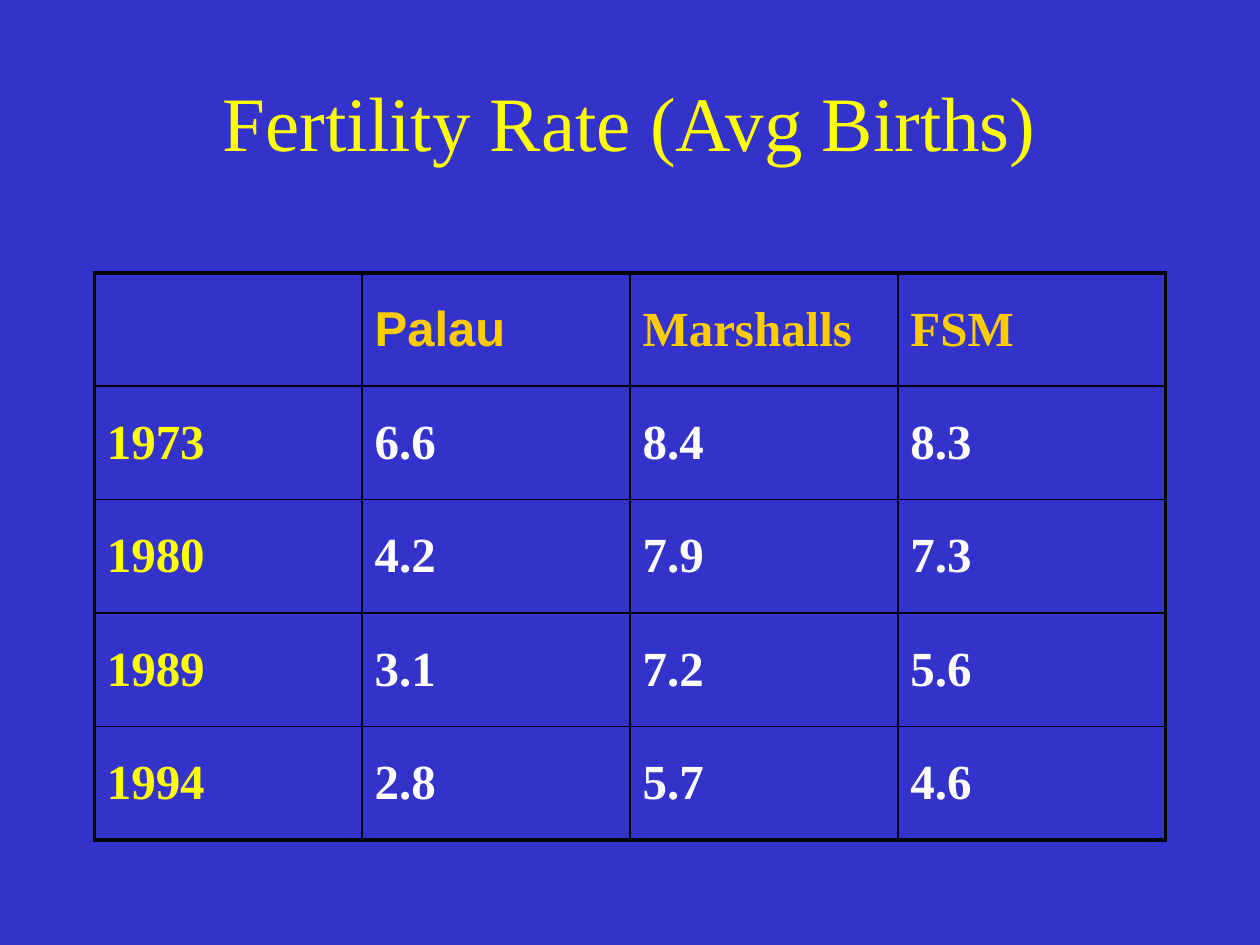
from lxml.etree import SubElement
from pptx import Presentation
from pptx.dml.color import RGBColor
from pptx.enum.text import MSO_ANCHOR, PP_ALIGN
from pptx.oxml.ns import qn
from pptx.util import Cm, Pt

BLUE, YELLOW, GOLD, WHITE, BLACK = "3333CC", "FFFF00", "FFCC00", "FFFFFF", "000000"
SERIF, SANS = "Times New Roman", "Arial"
INNER, OUTER = Pt(1), Pt(2.25)
BIRTHS = [
    ["", "Palau", "Marshalls", "FSM"],
    ["1973", "6.6", "8.4", "8.3"],
    ["1980", "4.2", "7.9", "7.3"],
    ["1989", "3.1", "7.2", "5.6"],
    ["1994", "2.8", "5.7", "4.6"],
]


def color(value):
    """Turn a hex string into a colour."""
    return RGBColor.from_string(value)


class Deck:
    """Hold the style and the current slide."""

    def __init__(self):
        """Start a 4:3 presentation with one title-only slide."""
        self.presentation = Presentation()
        self.presentation.slide_width = Cm(25.4)
        self.presentation.slide_height = Cm(19.05)
        self.slide = self.presentation.slides.add_slide(self.presentation.slide_layouts[5])
        background = self.slide.background.fill
        background.solid()
        background.fore_color.rgb = color(BLUE)

    def style(self, paragraph, size, tint, face=SERIF, bold=False):
        """Set the font of a paragraph."""
        font = paragraph.font
        font.size, font.name, font.bold = Pt(size), face, bold
        font.color.rgb = color(tint)

    def title(self, text, left, top, width, height):
        """Place and format the slide title."""
        heading = self.slide.shapes.title
        heading.left, heading.top = Cm(left), Cm(top)
        heading.width, heading.height = Cm(width), Cm(height)
        frame = heading.text_frame
        frame.text = text
        frame.vertical_anchor = MSO_ANCHOR.MIDDLE
        frame.paragraphs[0].alignment = PP_ALIGN.CENTER
        self.style(frame.paragraphs[0], 44, YELLOW)

    def borders(self, cell, widths):
        """Draw the left, right, top and bottom lines of a cell."""
        properties = cell._tc.get_or_add_tcPr()
        for side, width in zip("LRTB", widths):
            line = SubElement(properties, qn(f"a:ln{side}"), w=str(width))
            SubElement(SubElement(line, qn("a:solidFill")), qn("a:srgbClr"), val=BLACK)

    def table(self, rows, left, top, width, height):
        """Add an unfilled table with a heavy outer frame."""
        last_row, last_column = len(rows) - 1, len(rows[0]) - 1
        grid = self.slide.shapes.add_table(
            len(rows), len(rows[0]), Cm(left), Cm(top), Cm(width), Cm(height)
        ).table
        grid.first_row = grid.horz_banding = False
        for r, row in enumerate(rows):
            for c, text in enumerate(row):
                cell = grid.cell(r, c)
                cell.text = text
                cell.vertical_anchor = MSO_ANCHOR.MIDDLE
                tint = GOLD if r == 0 else YELLOW if c == 0 else WHITE
                face = SANS if text == "Palau" else SERIF
                self.style(cell.text_frame.paragraphs[0], 28, tint, face, bold=True)
                edges = (c == 0, c == last_column, r == 0, r == last_row)
                self.borders(cell, [OUTER if edge else INNER for edge in edges])
                cell.fill.background()


def main():
    """Build and save the fertility slide."""
    deck = Deck()
    deck.title("Fertility Rate (Avg Births)", 1.9, 0.85, 21.6, 3.18)
    deck.table(BIRTHS, 1.9, 5.5, 21.6, 11.43)
    deck.presentation.save("out.pptx")


if __name__ == "__main__":
    main()
